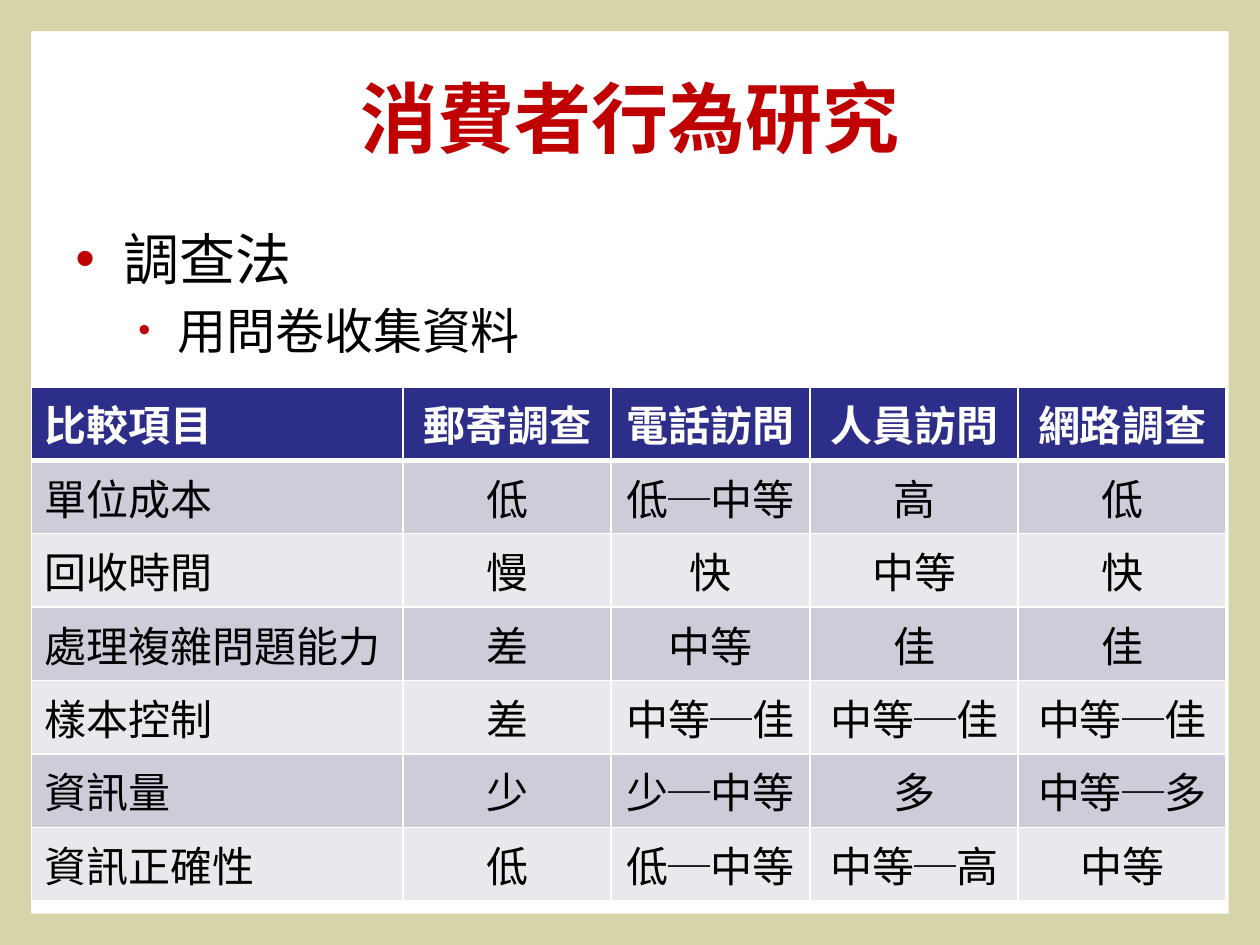
from lxml import etree
from pptx import Presentation
from pptx import util as u
from pptx.dml.color import RGBColor
from pptx.enum import shapes, text
from pptx.oxml import ns

WHITE = RGBColor(0xFF, 0xFF, 0xFF)
BLACK = RGBColor(0, 0, 0)
RED = RGBColor(0xC0, 0, 0)
KHAKI = RGBColor(0xD6, 0xD5, 0xA9)
NAVY = RGBColor(0x2D, 0x2D, 0x8A)
BANDS = (RGBColor(0xCD, 0xCD, 0xDA), RGBColor(0xE8, 0xE8, 0xED))

HEADING = "消費者行為研究"
POINTS = [("調查法", 32, 0.38, 0.38, 100), ("用問卷收集資料", 28, 0.81, 0.31, 70)]
COLUMNS = (2.95, 1.65, 1.58, 1.65, 1.65)
ROWS = [
    ("比較項目", "郵寄調查", "電話訪問", "人員訪問", "網路調查"),
    ("單位成本", "低", "低─中等", "高", "低"),
    ("回收時間", "慢", "快", "中等", "快"),
    ("處理複雜問題能力", "差", "中等", "佳", "佳"),
    ("樣本控制", "差", "中等─佳", "中等─佳", "中等─佳"),
    ("資訊量", "少", "少─中等", "多", "中等─多"),
    ("資訊正確性", "低", "低─中等", "中等─高", "中等"),
]


def add_element(parent, tag, **attributes):
    return etree.SubElement(parent, ns.qn(tag), attributes)


class SlideBuilder:
    east_asian = "Noto Sans CJK TC"

    def __init__(self, deck):
        self.page = deck.slides.add_slide(deck.slide_layouts[5])

    def style(self, para, size, color, bold=False, name=east_asian):
        font = para.font
        font.name = name
        font.size = u.Pt(size)
        font.bold = bold
        font.color.rgb = color
        latin = para._p.pPr.find(".//" + ns.qn("a:latin"))
        east = etree.Element(ns.qn("a:ea"), typeface=self.east_asian)
        latin.addnext(east)

    def frame(self, width, height):
        border = self.page.shapes.add_shape(shapes.MSO_SHAPE.FRAME, 0, 0, width, height)
        border.adjustments[0] = 0.033
        border.shadow.inherit = False
        border.fill.solid()
        border.fill.fore_color.rgb = KHAKI
        border.line.fill.background()

    def title(self, words, left, top, width, height):
        box = self.page.shapes.title
        box.left, box.top = u.Inches(left), u.Inches(top)
        box.width, box.height = u.Inches(width), u.Inches(height)
        box.text_frame.text = words
        box.text_frame.vertical_anchor = text.MSO_ANCHOR.MIDDLE
        para = box.text_frame.paragraphs[0]
        para.alignment = text.PP_ALIGN.CENTER
        self.style(para, 44, RED, bold=True)

    def bullets(self, points, left, top, width, height):
        box = self.page.shapes.add_textbox(
            u.Inches(left), u.Inches(top), u.Inches(width), u.Inches(height))
        body = box.text_frame
        body.word_wrap = True
        body.margin_top = u.Inches(0.03)
        for level, (words, size, margin, hanging, bullet_size) in enumerate(points):
            para = body.add_paragraph() if level else body.paragraphs[0]
            para.text = words
            para.level = level
            if level:
                para.space_before = u.Pt(5)
            properties = para._p.get_or_add_pPr()
            properties.set("marL", str(u.Inches(margin)))
            properties.set("indent", str(-u.Inches(hanging)))
            add_element(add_element(properties, "a:buClr"), "a:srgbClr", val=str(RED))
            add_element(properties, "a:buSzPct", val=str(bullet_size * 1000))
            add_element(properties, "a:buFont", typeface="Arial")
            add_element(properties, "a:buChar", char="•")
            self.style(para, size, BLACK)

    def borders(self, cell, top, bottom):
        properties = cell._tc.get_or_add_tcPr()
        for side, points in (("L", 1), ("R", 1), ("T", top), ("B", bottom)):
            line = add_element(properties, "a:ln" + side, w=str(u.Pt(points)))
            add_element(add_element(line, "a:solidFill"), "a:srgbClr", val=str(WHITE))

    def table(self, rows, columns, left, top, row_height):
        grid = self.page.shapes.add_table(
            len(rows), len(columns), u.Inches(left), u.Inches(top),
            u.Inches(sum(columns)), u.Inches(row_height * len(rows))).table
        for column, width in zip(grid.columns, columns):
            column.width = u.Inches(width)
        for r, row in enumerate(rows):
            header = r == 0
            for c, words in enumerate(row):
                cell = grid.cell(r, c)
                cell.text = words
                self.borders(cell, 3 if r == 1 else 1, 3 if header else 1)
                cell.fill.solid()
                cell.fill.fore_color.rgb = NAVY if header else BANDS[(r - 1) % 2]
                para = cell.text_frame.paragraphs[0]
                para.alignment = text.PP_ALIGN.CENTER if c else text.PP_ALIGN.LEFT
                self.style(para, 24, WHITE if header else BLACK, header, "Arial")


def main():
    deck = Presentation()
    deck.slide_width, deck.slide_height = u.Inches(10), u.Inches(7.5)
    builder = SlideBuilder(deck)
    builder.frame(deck.slide_width, deck.slide_height)
    builder.title(HEADING, 0.5, 0.3, 9, 1.25)
    builder.bullets(POINTS, 0.5, 1.75, 9, 4.95)
    builder.table(ROWS, COLUMNS, 0.25, 3.07, 4.08 / len(ROWS))
    deck.save("out.pptx")


if __name__ == "__main__":
    main()
